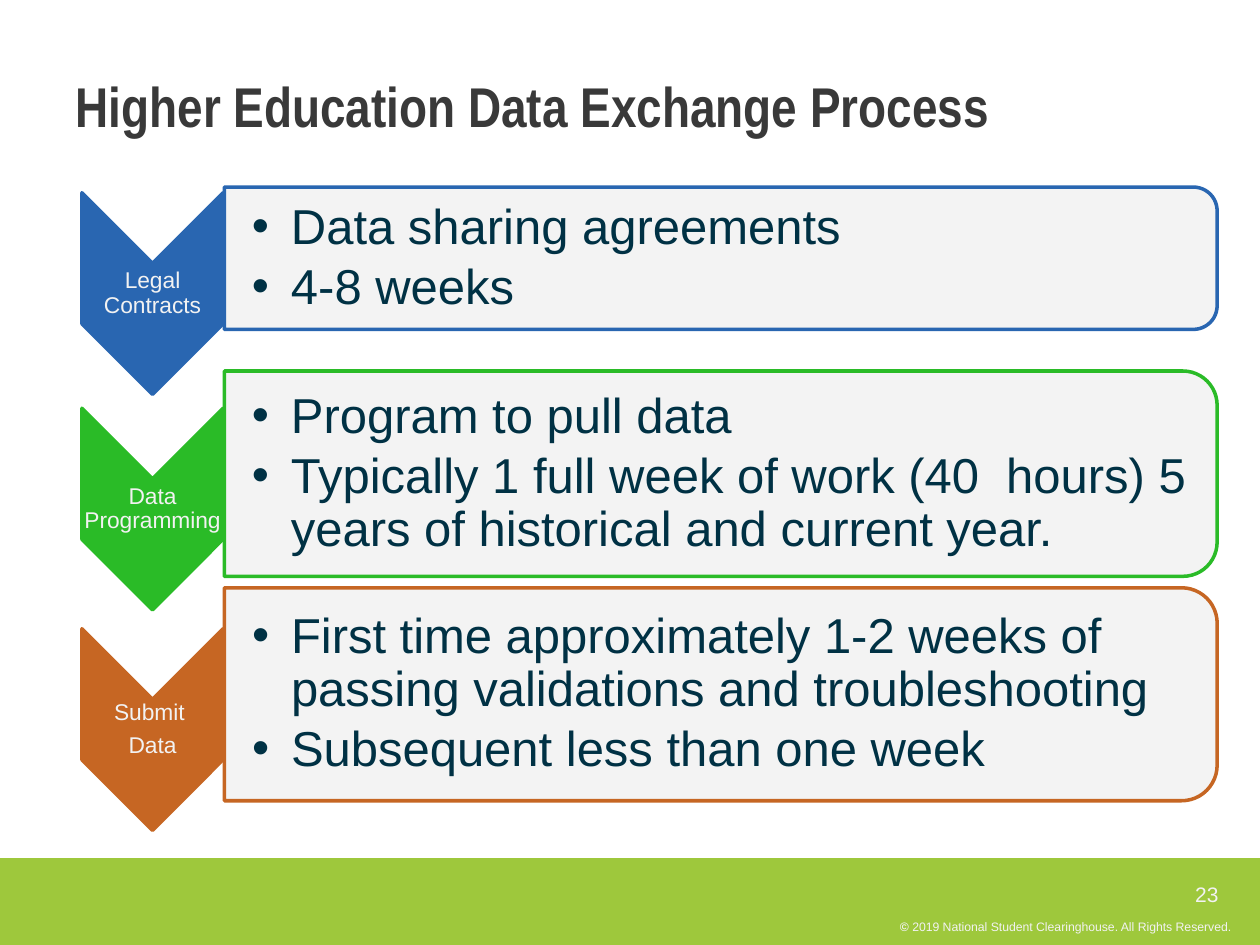
from lxml.etree import SubElement
from pptx import Presentation
from pptx.dml.color import RGBColor
from pptx.enum.shapes import MSO_SHAPE
from pptx.enum.text import MSO_ANCHOR, MSO_AUTO_SIZE, PP_ALIGN
from pptx.oxml.ns import qn
from pptx.util import Inches, Pt

# Content
TITLE = "Higher Education Data Exchange Process"
PAGE = "23"
COPYRIGHT = [("©\u00a0", True), ("2019 National Student Clearinghouse. All Rights Reserved.", False)]
# label lines, bullets, colour, panel middle, panel height
STEPS = [
    (["Legal Contracts"], ["Data sharing agreements", "4-8 weeks"], "2966B1", 2.05, 1.13),
    (["Data Programming"],
     ["Program to pull data",
      "Typically 1 full week of work (40  hours) 5 years of historical and current year."],
     "2ABB27", 3.76, 1.63),
    (["Submit ", "Data"],
     ["First time approximately 1-2 weeks of passing validations and troubleshooting",
      "Subsequent less than one week"], "C66623", 5.51, 1.69),
]

THEME = dict(
    font="Arial", title_font="Arial Narrow",
    title="393939", text="003144", light="F2F2F2", footer="9EC83C",
    title_size=32, bullet_size=28, label_size=13, page_size=12, copyright_size=7,
)

# Geometry in inches
PANEL_LEFT, PANEL_WIDTH = 1.78, 7.88
CHEVRON_MID, CHEVRON_DROP = 1.21, 0.28
CHEVRON_LENGTH, CHEVRON_WIDTH = 1.6, 1.12
LABEL_HEIGHT = 0.48
TEXT_INSET = 0.05  # panel text stays clear of the rounded corners


def rgb(name):
    return RGBColor.from_string(name)


def add_bullet(p, color, indent):
    pPr = p._p.get_or_add_pPr()
    pPr.set("marL", str(Inches(indent)))
    pPr.set("indent", str(-Inches(indent)))
    SubElement(SubElement(pPr, qn("a:buClr")), qn("a:srgbClr"), val=color)
    SubElement(pPr, qn("a:buFont"), typeface=THEME["font"])
    SubElement(pPr, qn("a:buChar"), char="•")


def write(shape, paragraphs, size, color, font=THEME["font"], align=PP_ALIGN.LEFT,
          anchor=MSO_ANCHOR.TOP, insets=(0.1, 0.05, 0.1, 0.05), spacing=None,
          gap=0, bullet=False, bold=False):
    """Fill a shape; each paragraph is a string or a list of (text, bold) runs."""
    tf = shape.text_frame
    tf.word_wrap, tf.auto_size, tf.vertical_anchor = True, MSO_AUTO_SIZE.NONE, anchor
    tf.margin_left, tf.margin_top, tf.margin_right, tf.margin_bottom = map(Inches, insets)
    for i, runs in enumerate(paragraphs):
        p = tf.add_paragraph() if i else tf.paragraphs[0]
        if bullet:
            add_bullet(p, color, 0.31)
        p.alignment = align
        if spacing:
            p.line_spacing = spacing
        p.space_before = Pt(gap if i else 0)
        for text, is_bold in [(runs, bold)] if isinstance(runs, str) else runs:
            r = p.add_run()
            r.text = text
            r.font.name, r.font.size, r.font.bold = font, Pt(size), is_bold
            r.font.color.rgb = rgb(color)


def add_textbox(s, left, top, width, height):
    return s.shapes.add_textbox(*map(Inches, (left, top, width, height)))


def add_turned(s, kind, mid_x, mid_y, length, breadth, fill, line, adjustments):
    """Add a shape turned a quarter clockwise around its middle."""
    sp = s.shapes.add_shape(kind, *map(Inches, (
        mid_x - length / 2, mid_y - breadth / 2, length, breadth)))
    sp.rotation = 90
    sp.shadow.inherit = False
    for i, value in enumerate(adjustments):
        sp.adjustments[i] = value
    sp.fill.solid()
    sp.fill.fore_color.rgb = rgb(fill)
    sp.line.color.rgb, sp.line.width = rgb(line), Pt(2)
    return sp


def add_step(s, label, bullets, color, mid, height):
    # Chevron and its label
    chevron_y = mid + CHEVRON_DROP
    add_turned(s, MSO_SHAPE.CHEVRON, CHEVRON_MID, chevron_y, CHEVRON_LENGTH,
               CHEVRON_WIDTH, color, color, [0.5])
    box = add_textbox(s, CHEVRON_MID - CHEVRON_WIDTH / 2, chevron_y - LABEL_HEIGHT / 2,
                      CHEVRON_WIDTH, LABEL_HEIGHT)
    write(box, label, THEME["label_size"], THEME["light"], align=PP_ALIGN.CENTER,
          anchor=MSO_ANCHOR.MIDDLE, insets=[0.01] * 4, spacing=0.9, gap=4.5)

    # Panel, slightly see-through, and its bullets
    panel = add_turned(s, MSO_SHAPE.ROUND_2_SAME_RECTANGLE, PANEL_LEFT + PANEL_WIDTH / 2, mid,
                       height, PANEL_WIDTH, THEME["light"], color, [0.167, 0])
    fill = panel._element.spPr.find(qn("a:solidFill"))
    SubElement(fill[0], qn("a:alpha"), val="90000")
    text_inset = TEXT_INSET * height
    box = add_textbox(s, PANEL_LEFT, mid - height / 2 + text_inset,
                      PANEL_WIDTH - text_inset, height - 2 * text_inset)
    write(box, bullets, THEME["bullet_size"], THEME["text"], anchor=MSO_ANCHOR.MIDDLE,
          insets=(0.22, 0.02, 0.02, 0.02), spacing=0.9, gap=4.2, bullet=True)


def main():
    prs = Presentation()
    prs.slide_width, prs.slide_height = Inches(10), Inches(7.5)
    s = prs.slides.add_slide(prs.slide_layouts[5])

    # Footer band, copyright and page number
    band = s.shapes.add_shape(MSO_SHAPE.RECTANGLE, *map(Inches, (0, 6.81, 10, 0.69)))
    band.shadow.inherit = False
    band.fill.solid()
    band.fill.fore_color.rgb = rgb(THEME["footer"])
    band.line.fill.background()
    write(add_textbox(s, 6.6, 7.25, 3.27, 0.22), [COPYRIGHT], THEME["copyright_size"],
          THEME["light"], align=PP_ALIGN.RIGHT)
    write(add_textbox(s, 9.23, 6.95, 0.54, 0.21), [PAGE], THEME["page_size"],
          THEME["light"], align=PP_ALIGN.RIGHT)

    # Title
    title = s.shapes.title
    title.left, title.top, title.width, title.height = map(Inches, (0.5, 0.51, 9, 0.7))
    write(title, [TITLE], THEME["title_size"], THEME["title"], font=THEME["title_font"],
          anchor=MSO_ANCHOR.MIDDLE, spacing=0.94, bold=True)

    # Process steps
    for step in STEPS:
        add_step(s, *step)

    prs.save("out.pptx")


if __name__ == "__main__":
    main()
